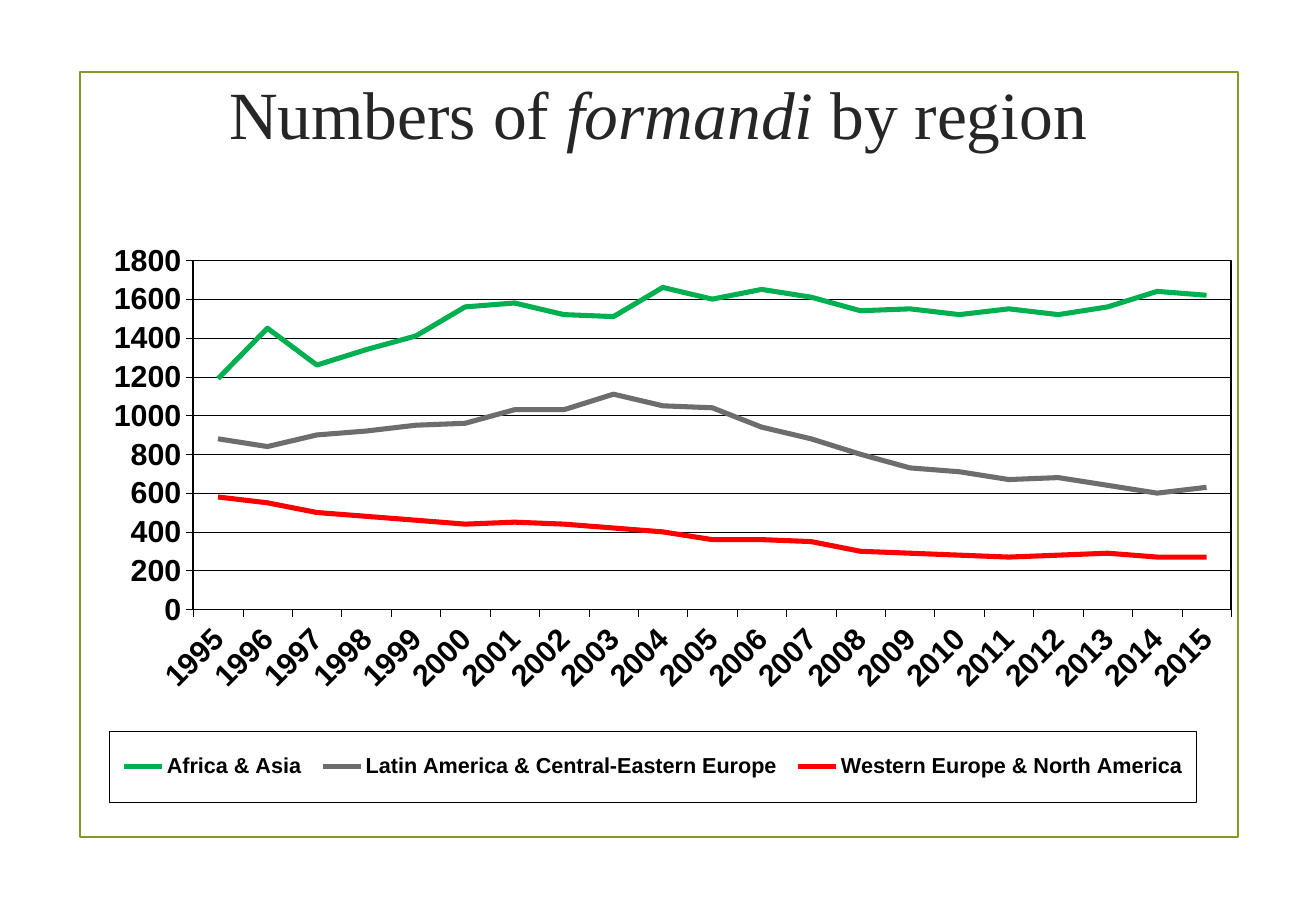
from dataclasses import dataclass

from lxml import etree
from pptx import Presentation
from pptx.chart.data import CategoryChartData
from pptx.dml.color import RGBColor
from pptx.enum.chart import XL_CHART_TYPE, XL_LEGEND_POSITION, XL_MARKER_STYLE, XL_TICK_MARK
from pptx.enum.shapes import MSO_SHAPE
from pptx.enum.text import MSO_ANCHOR, PP_ALIGN
from pptx.oxml import parse_xml
from pptx.oxml.ns import nsdecls, qn
from pptx.util import Inches, Pt

LINE_CHART = XL_CHART_TYPE.LINE
LEGEND_BOTTOM = XL_LEGEND_POSITION.BOTTOM
NO_MARKER = XL_MARKER_STYLE.NONE
TICK_OUTSIDE = XL_TICK_MARK.OUTSIDE
RECTANGLE = MSO_SHAPE.RECTANGLE
MIDDLE = MSO_ANCHOR.MIDDLE
CENTER = PP_ALIGN.CENTER
TITLE_ONLY = 5


@dataclass(frozen=True)
class Theme:
    """Colours, fonts and type sizes of the slide."""
    frame: str = "83992A"
    title: str = "262626"
    ink: str = "000000"
    title_font: str = "Times New Roman"
    chart_font: str = "Arial"
    title_size: float = 40
    axis_size: float = 18
    legend_size: float = 12.8
    frame_width: float = 1.25
    axis_width: float = 0.25
    border_width: float = 1
    series_width: float = 3


THEME = Theme()
YEARS = [str(year) for year in range(1995, 2016)]
REGIONS = [
    ("Africa & Asia", "00B050",
     [1190, 1450, 1260, 1340, 1410, 1560, 1580, 1520, 1510, 1660, 1600,
      1650, 1610, 1540, 1550, 1520, 1550, 1520, 1560, 1640, 1620]),
    ("Latin America & Central-Eastern Europe", "6D6D6D",
     [880, 840, 900, 920, 950, 960, 1030, 1030, 1110, 1050, 1040,
      940, 880, 800, 730, 710, 670, 680, 640, 600, 630]),
    ("Western Europe & North America", "FF0000",
     [580, 550, 500, 480, 460, 440, 450, 440, 420, 400, 360,
      360, 350, 300, 290, 280, 270, 280, 290, 270, 270]),
]


def style_line(line, color, width):
    """Set the colour and the width in points of a line."""
    line.color.rgb = RGBColor.from_string(color)
    line.width = Pt(width)


def style_font(font, name, size, color, bold):
    """Set face, size, colour and weight of a font."""
    font.name = name
    font.size = Pt(size)
    font.color.rgb = RGBColor.from_string(color)
    font.bold = bold


def set_layout(element, index, box, inner=False):
    """Give a chart part a fixed box, in fractions of the chart."""
    for layout in element.findall(qn("c:layout")):
        element.remove(layout)
    layout = parse_xml(f"<c:layout {nsdecls('c')}><c:manualLayout/></c:layout>")
    settings = [("layoutTarget", "inner")] if inner else []
    settings += [("xMode", "edge"), ("yMode", "edge")]
    settings += zip("xywh", box)
    for tag, value in settings:
        etree.SubElement(layout[0], qn(f"c:{tag}")).set("val", str(value))
    element.insert(index, layout)


def make_border(width):
    """Return chart shape properties with no fill and a solid outline."""
    return parse_xml(
        f'<c:spPr {nsdecls("c", "a")}><a:noFill/><a:ln w="{Pt(width)}"><a:solidFill>'
        f'<a:srgbClr val="{THEME.ink}"/></a:solidFill></a:ln></c:spPr>')


def add_frame(slide, box):
    """Draw the outline around the content."""
    frame = slide.shapes.add_shape(RECTANGLE, *map(Inches, box))
    frame.shadow.inherit = False
    frame.fill.background()
    style_line(frame.line, THEME.frame, THEME.frame_width)


def add_title(slide, box):
    """Place and fill the title placeholder."""
    title = slide.shapes.title
    title.left, title.top, title.width, title.height = map(Inches, box)
    title.text_frame.vertical_anchor = MIDDLE
    paragraph = title.text_frame.paragraphs[0]
    paragraph.alignment = CENTER
    for text, italic in [("Numbers of ", False), ("formandi ", True), ("by region", False)]:
        run = paragraph.add_run()
        run.text = text
        run.font.italic = italic
    style_font(paragraph.font, THEME.title_font, THEME.title_size, THEME.title, False)


def style_axes(chart):
    """Format both axes, the scale and the gridlines."""
    for axis in (chart.category_axis, chart.value_axis):
        axis.major_tick_mark = TICK_OUTSIDE
        style_line(axis.format.line, THEME.ink, THEME.axis_width)
        style_font(axis.tick_labels.font, THEME.chart_font, THEME.axis_size, THEME.ink, True)
    body = chart.category_axis._element.find(qn("c:txPr")).find(qn("a:bodyPr"))
    body.set("rot", "-2700000")
    body.set("vert", "horz")
    scale = chart.value_axis
    scale.minimum_scale, scale.maximum_scale, scale.major_unit = 0, 1800, 200
    style_line(scale.major_gridlines.format.line, THEME.ink, THEME.axis_width)


def style_legend(chart):
    """Put a framed legend below the plot."""
    chart.has_legend = True
    legend = chart.legend
    legend.position = LEGEND_BOTTOM
    legend.include_in_layout = False
    style_font(legend.font, THEME.chart_font, THEME.legend_size, THEME.ink, True)
    set_layout(legend._element, 1, (0.03, 0.87, 0.93, 0.12))
    legend._element.find(qn("c:txPr")).addprevious(make_border(THEME.axis_width))


def add_region_chart(slide, box):
    """Add the line chart of the three regions."""
    data = CategoryChartData()
    data.categories = YEARS
    for name, _, values in REGIONS:
        data.add_series(name, values)
    chart = slide.shapes.add_chart(LINE_CHART, *map(Inches, box), data).chart
    chart.has_title = False
    style_font(chart.font, THEME.chart_font, THEME.axis_size, THEME.ink, True)
    plot = chart.plots[0]
    plot.vary_by_categories = False
    for series, (_, color, _) in zip(plot.series, REGIONS):
        series.smooth = False
        series.marker.style = NO_MARKER
        style_line(series.format.line, color, THEME.series_width)
    style_axes(chart)
    style_legend(chart)
    plot_area = chart._chartSpace.chart.plotArea
    set_layout(plot_area, 0, (0.102, 0.069, 0.888, 0.594), inner=True)
    plot_area.append(make_border(THEME.border_width))


def main():
    """Build the slide and save it."""
    presentation = Presentation()
    presentation.slide_width = Inches(10.83)
    presentation.slide_height = Inches(7.5)
    slide = presentation.slides.add_slide(presentation.slide_layouts[TITLE_ONLY])
    add_frame(slide, (0.66, 0.59, 9.53, 6.3))
    add_title(slide, (0.54, 0.3, 9.75, 1.25))
    add_region_chart(slide, (0.61, 1.81, 9.62, 4.84))
    presentation.save("out.pptx")


if __name__ == "__main__":
    main()
